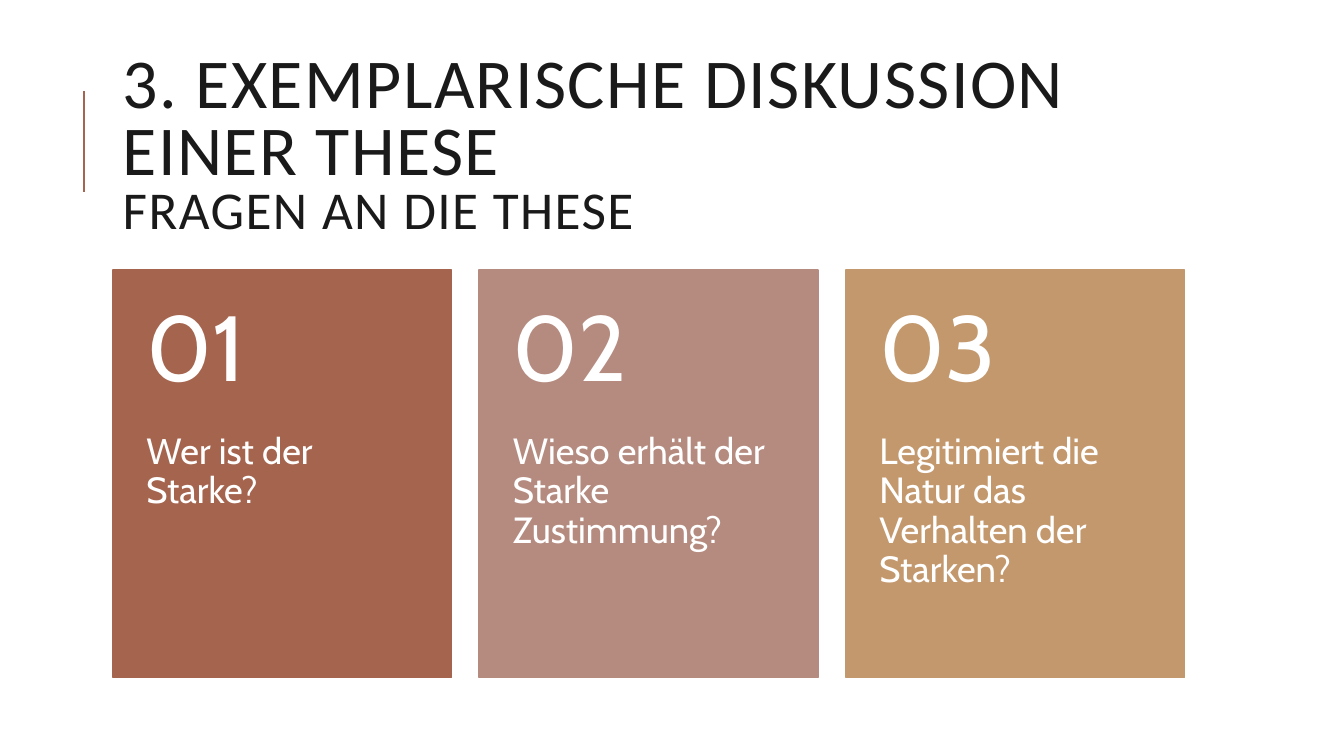
from lxml import etree
from pptx import Presentation
from pptx.dml.color import RGBColor
from pptx.enum import shapes, text
from pptx.util import Pt

RUST = RGBColor(0xA5, 0x64, 0x4E)
ROSE = RGBColor(0xB5, 0x8B, 0x80)
SAND = RGBColor(0xC3, 0x98, 0x6D)
INK = RGBColor(0x1A, 0x1A, 0x1A)
WHITE = RGBColor(0xFF, 0xFF, 0xFF)

LEFT, TOP = 80.6, 193.1
WIDTH, HEIGHT = 242, 290.8
STEP = 261.8
HEAD = 116.3

CARDS = [
    (RUST, "Wer ist der Starke?"),
    (ROSE, "Wieso erhält der Starke Zustimmung?"),
    (SAND, "Legitimiert die Natur das Verhalten der Starken?"),
]


def apply(item, form):
    for name, value in form.items():
        setattr(item, name, value)


def add_run(para, words, size, font, color):
    run = para.add_run()
    run.text = words
    apply(run.font, {"size": Pt(size), "name": font})
    run.font.color.rgb = color
    return run


def add_box(slide, box, anchor, pads, spacing):
    frame = slide.shapes.add_textbox(*map(Pt, box)).text_frame
    left, top, right, bottom = map(Pt, pads)
    apply(frame, {
        "word_wrap": True,
        "vertical_anchor": anchor,
        "margin_left": left,
        "margin_top": top,
        "margin_right": right,
        "margin_bottom": bottom,
    })
    para = frame.paragraphs[0]
    apply(para, {"line_spacing": spacing, "alignment": text.PP_ALIGN.LEFT})
    return para


def add_rule(slide):
    line = slide.shapes.add_connector(
        shapes.MSO_CONNECTOR.STRAIGHT, Pt(60), Pt(136.8), Pt(60), Pt(64.8))
    line.line.color.rgb = RUST
    line.line.width = Pt(1.5)
    props = line._element.spPr
    etree.SubElement(props, props.tag.replace("}spPr", "}effectLst").replace(
        "presentationml", "drawingml").replace("2006/main", "2006/main"))


def add_title(slide):
    para = add_box(slide, (LEFT, 46.1, 765.4, 118.1),
                   text.MSO_ANCHOR.MIDDLE, (7.2, 3.6, 7.2, 3.6), 0.8)
    head = add_run(para, "3. EXEMPLARISCHE DISKUSSION EINER THESE",
                   50, "Calibri", INK)
    para.add_line_break()
    sub = add_run(para, "FRAGEN AN DIE THESE", 38, "Calibri", INK)
    for run in (head, sub):
        run.font._element.set("spc", "100")


def add_card(slide, index, color, words):
    left = LEFT + index * STEP
    card = slide.shapes.add_shape(
        shapes.MSO_SHAPE.RECTANGLE, *map(Pt, (left, TOP, WIDTH, HEIGHT)))
    card.shadow.inherit = False
    card.fill.solid()
    card.fill.fore_color.rgb = color
    card.line.color.rgb = color
    card.line.width = Pt(1.25)
    body = add_box(slide, (left, TOP + HEAD, WIDTH, HEIGHT - HEAD),
                   text.MSO_ANCHOR.TOP, (24, 0, 24, 26), 0.9)
    add_run(body, words, 26, "Cabin", WHITE)
    label = add_box(slide, (left, TOP, WIDTH, HEAD),
                    text.MSO_ANCHOR.MIDDLE, (24, 13, 24, 13), 0.9)
    add_run(label, f"{index + 1:02d}", 66, "Cabin", WHITE)


def main():
    deck = Presentation()
    apply(deck, {"slide_width": Pt(960), "slide_height": Pt(540)})
    slide = deck.slides.add_slide(deck.slide_layouts[6])
    add_rule(slide)
    add_title(slide)
    for index, (color, words) in enumerate(CARDS):
        add_card(slide, index, color, words)
    deck.save("out.pptx")


if __name__ == "__main__":
    main()
